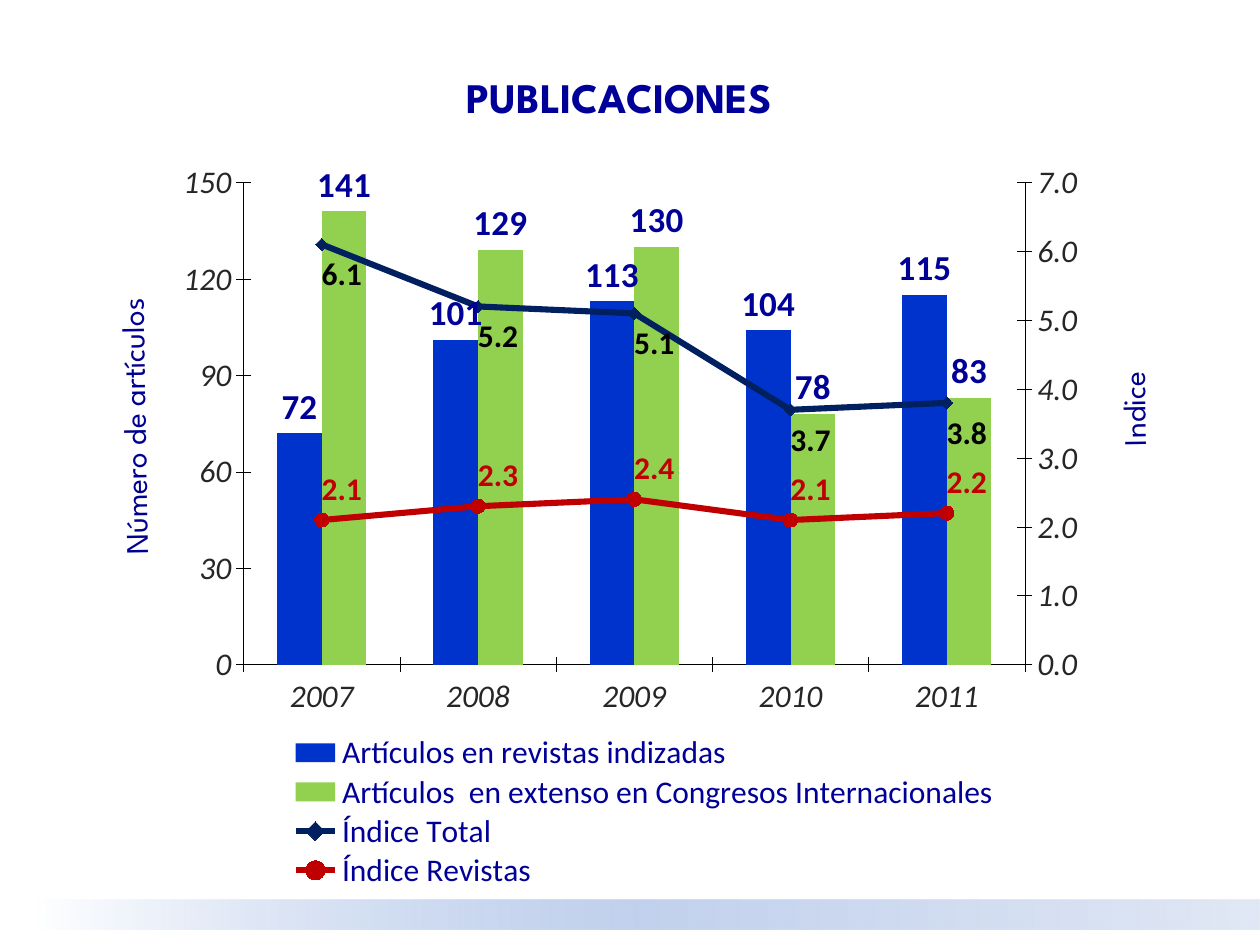
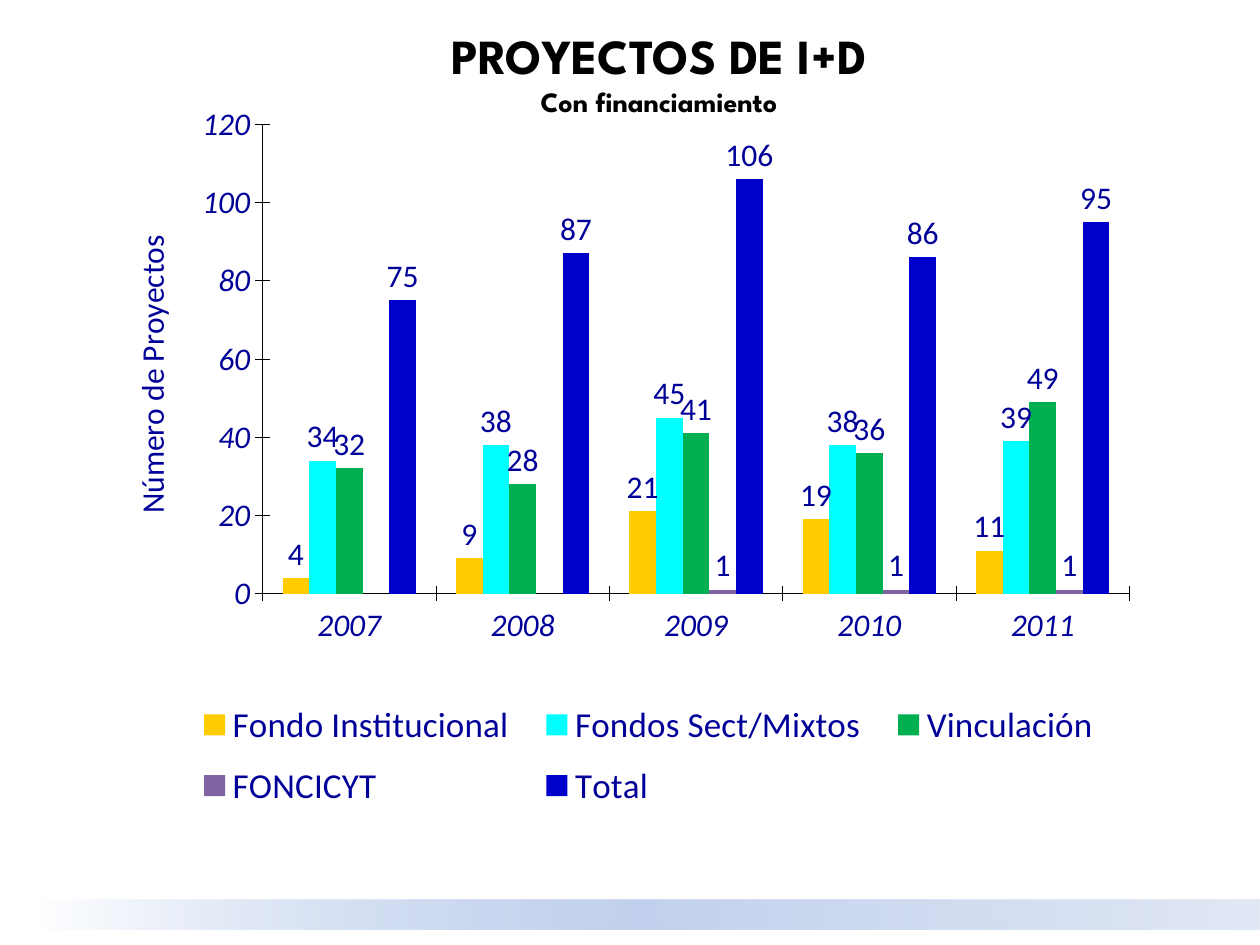
from copy import deepcopy
from dataclasses import dataclass

from pptx import Presentation
from pptx.chart.axis import ValueAxis
from pptx.chart.data import CategoryChartData
from pptx.dml.color import RGBColor
from pptx.enum.chart import (XL_CHART_TYPE, XL_LABEL_POSITION, XL_LEGEND_POSITION,
                             XL_MARKER_STYLE, XL_TICK_MARK)
from pptx.enum.shapes import MSO_SHAPE
from pptx.enum.text import MSO_ANCHOR, MSO_AUTO_SIZE, PP_ALIGN
from pptx.oxml import parse_xml
from pptx.oxml.ns import nsdecls, qn
from pptx.util import Inches, Pt

COLUMNS = XL_CHART_TYPE.COLUMN_CLUSTERED
ABOVE, BELOW, OUTSIDE = (XL_LABEL_POSITION.ABOVE, XL_LABEL_POSITION.BELOW,
                         XL_LABEL_POSITION.OUTSIDE_END)
DIAMOND, CIRCLE = XL_MARKER_STYLE.DIAMOND, XL_MARKER_STYLE.CIRCLE
CROSS = XL_TICK_MARK.CROSS
LEGEND_RIGHT = XL_LEGEND_POSITION.RIGHT
RECTANGLE = MSO_SHAPE.RECTANGLE
CENTER = PP_ALIGN.CENTER
MIDDLE = MSO_ANCHOR.MIDDLE
NO_FIT = MSO_AUTO_SIZE.NONE
TITLE_ONLY = 5
GRID_COLS, GRID_ROWS = 100, 75
SLIDE_W, SLIDE_H = Inches(10), Inches(7.5)
YEARS = ["2007", "2008", "2009", "2010", "2011"]


@dataclass(frozen=True)
class Theme:
    """Colours, fonts and type sizes shared by the slides."""
    heading: str = "League Spartan"
    body: str = "Calibri"
    navy: str = "000099"
    side: str = "000090"
    black: str = "000000"
    grey: str = "262626"
    band: tuple = ((0, "9AB5E4", 0), (50, "C2D1ED", 100), (100, "E1E8F5", 100))
    text: int = 18
    large: int = 20
    subtitle: int = 16


T = Theme()

ARTICLES = [("Artículos en revistas indizadas", "0033CC", (72, 101, 113, 104, 115)),
            ("Artículos  en extenso en Congresos Internacionales", "92D050",
             (141, 129, 130, 78, 83))]
INDEXES = [("Índice Total", "002060", (6.1, 5.2, 5.1, 3.7, 3.8)),
           ("Índice Revistas", "C00000", (2.1, 2.3, 2.4, 2.1, 2.2))]
INDEX_STYLES = [(DIAMOND, 7, BELOW, T.black), (CIRCLE, 8, ABOVE, "C00000")]
PROJECTS = [("Fondo Institucional", "FFCC00", (4, 9, 21, 19, 11)),
            ("Fondos Sect/Mixtos", "00FFFF", (34, 38, 45, 38, 39)),
            ("Vinculación", "00B050", (32, 28, 41, 36, 49)),
            ("FONCICYT", "8064A2", (None, None, 1, 1, 1)),
            ("Total", "0000CC", (75, 87, 106, 86, 95))]


def place(box):
    """Turn a box in grid columns and rows into slide lengths."""
    x, y, w, h = box
    return (int(SLIDE_W * x / GRID_COLS), int(SLIDE_H * y / GRID_ROWS),
            int(SLIDE_W * w / GRID_COLS), int(SLIDE_H * h / GRID_ROWS))


def style_font(font, size, color, name=T.body, bold=False, italic=False):
    """Format a run or chart font."""
    font.name, font.size, font.bold, font.italic = name, Pt(size), bold, italic
    font.color.rgb = RGBColor.from_string(color)


def paint(fill, color):
    """Give a fill one solid colour."""
    fill.solid()
    fill.fore_color.rgb = RGBColor.from_string(color)


def add_master_band(prs, s, box):
    """Place the fading band on the master, behind every slide."""
    band = s.shapes.add_shape(RECTANGLE, *place(box))
    band.shadow.inherit = False
    band.line.fill.background()
    band.fill.gradient()
    stops = "".join(
        f'<a:gs pos="{pos * 1000}"><a:srgbClr val="{color}">'
        f'<a:alpha val="{alpha * 1000}"/></a:srgbClr></a:gs>' for pos, color, alpha in T.band)
    grad = parse_xml(f'<a:gradFill {nsdecls("a")} rotWithShape="1"><a:gsLst>{stops}</a:gsLst>'
                     '<a:lin ang="0" scaled="0"/></a:gradFill>')
    old = band.element.spPr.find(qn("a:gradFill"))
    old.getparent().replace(old, grad)
    prs.slide_master.shapes.element.insert(2, band.element)


def add_title(s, box, lines, color):
    """Move the title placeholder and write its lines as (text, size)."""
    title = s.shapes.title
    title.left, title.top, title.width, title.height = place(box)
    tf = title.text_frame
    tf.text = "\n".join(text for text, _ in lines)
    tf.auto_size, tf.vertical_anchor, tf.word_wrap = NO_FIT, MIDDLE, True
    for p, (_, size) in zip(tf.paragraphs, lines):
        p.alignment = CENTER
        style_font(p.runs[0].font, size, color, T.heading, bold=True)


def add_side_label(s, box, text):
    """Write an axis caption that reads upwards."""
    label = s.shapes.add_textbox(*place(box))
    label.rotation = 269
    tf = label.text_frame
    tf.text = text
    tf.word_wrap, tf.auto_size = True, NO_FIT
    style_font(tf.paragraphs[0].runs[0].font, T.text, T.side, T.heading)


def set_layout(parent, index, box, target=""):
    """Fix the place of a chart part as shares of the chart."""
    for old in parent.findall(qn("c:layout")):
        parent.remove(old)
    sizes = "".join(f'<c:{k} val="{v}"/>' for k, v in zip("xywh", box))
    parent.insert(index, parse_xml(
        f'<c:layout {nsdecls("c")}><c:manualLayout>{target}<c:xMode val="edge"/>'
        f'<c:yMode val="edge"/>{sizes}</c:manualLayout></c:layout>'))


def style_axis(axis, color):
    """Give an axis a hairline, crossing ticks and italic labels."""
    axis.has_major_gridlines = False
    axis.major_tick_mark = CROSS
    axis.format.line.width = Pt(0.25)
    axis.format.line.color.rgb = RGBColor.from_string(T.black)
    style_font(axis.tick_labels.font, T.text, color, italic=True)


def label_series(series, size, color, position, bold=False, fmt="0"):
    """Show the values of a series."""
    labels = series.data_labels
    labels.show_value, labels.position = True, position
    labels.number_format, labels.number_format_is_linked = fmt, False
    style_font(labels.font, size, color, bold=bold)


def add_column_chart(s, box, rows, scale, axis_color, plot_box, legend_box, legend_size):
    """Add a clustered column chart with its axes, plot area and legend."""
    data = CategoryChartData()
    data.categories = YEARS
    for name, _, values in rows:
        data.add_series(name, values)
    chart = s.shapes.add_chart(COLUMNS, *place(box), data).chart
    chart.has_title = False
    style_font(chart.font, T.text, T.black)
    plot = chart.plots[0]
    plot.vary_by_categories, plot.gap_width, plot.overlap = False, 150, 0
    for series, (_, color, _) in zip(plot.series, rows):
        paint(series.format.fill, color)
    for axis in (chart.category_axis, chart.value_axis):
        style_axis(axis, axis_color)
    axis = chart.value_axis
    axis.minimum_scale, axis.maximum_scale, axis.major_unit = 0, *scale
    axis.tick_labels.number_format = "#,##0"
    axis.tick_labels.number_format_is_linked = False
    chart.has_legend = True
    chart.legend.position, chart.legend.include_in_layout = LEGEND_RIGHT, False
    style_font(chart.legend.font, legend_size, T.navy)
    set_layout(chart.element.xpath(".//c:plotArea")[0], 0, plot_box,
               '<c:layoutTarget val="inner"/>')
    set_layout(chart.element.xpath(".//c:legend")[0], 1, legend_box)
    return chart


def move_to_right_axis(chart, first, top, step):
    """Turn the series from the given one on into lines on a right-hand axis."""
    area = chart.element.xpath(".//c:plotArea")[0]
    bars = area.find(qn("c:barChart"))
    lines = parse_xml(
        f'<c:lineChart {nsdecls("c")}><c:grouping val="standard"/><c:varyColors val="0"/>'
        '<c:marker val="1"/><c:axId val="101"/><c:axId val="102"/></c:lineChart>')
    for i, ser in enumerate(bars.findall(qn("c:ser"))[first:]):
        for tag in ("c:invertIfNegative", "c:spPr"):
            for child in ser.findall(qn(tag)):
                ser.remove(child)
        lines.insert(2 + i, ser)
    bars.addnext(lines)
    cat, val = (deepcopy(area.find(qn(tag))) for tag in ("c:catAx", "c:valAx"))
    for axis, own, other in ((cat, "101", "102"), (val, "102", "101")):
        axis.find(qn("c:axId")).set("val", own)
        axis.find(qn("c:crossAx")).set("val", other)
    area.findall(qn("c:valAx"))[-1].addnext(val)
    val.addnext(cat)
    cat.find(qn("c:delete")).set("val", "1")
    val.find(qn("c:axPos")).set("val", "r")
    val.find(qn("c:crosses")).set("val", "max")
    right = ValueAxis(val)
    right.maximum_scale, right.major_unit = top, step
    right.tick_labels.number_format = "0.0"


def style_line(series, color, marker, size):
    """Draw a thick straight line with markers of its colour."""
    series.smooth = False
    series.format.line.width = Pt(3.5)
    series.format.line.color.rgb = RGBColor.from_string(color)
    series.marker.style, series.marker.size = marker, size
    paint(series.marker.format.fill, color)
    series.marker.format.line.color.rgb = RGBColor.from_string(color)


def nudge_line_labels(chart, shift):
    """Shift each line label to the right by a share of the chart's width."""
    for labels in chart.element.xpath(".//c:lineChart/c:ser/c:dLbls"):
        for leader in labels.findall(qn("c:showLeaderLines")):
            labels.remove(leader)
        shared = list(labels)
        for i in range(len(YEARS)):
            label = parse_xml(
                f'<c:dLbl {nsdecls("c")}><c:idx val="{i}"/><c:layout><c:manualLayout>'
                f'<c:x val="{shift}"/><c:y val="0"/></c:manualLayout></c:layout></c:dLbl>')
            label.extend(deepcopy(child) for child in shared)
            labels.insert(i, label)


def build_publications(s):
    """Fill the slide on publications: columns for articles, lines for indexes."""
    add_title(s, (29.5, 5.2, 39.3, 5), [("PUBLICACIONES", 24)], T.navy)
    chart = add_column_chart(s, (10.6, 11.5, 79.5, 59.8), ARTICLES + INDEXES, (150, 30), T.grey,
                             (0.11, 0.05, 0.78, 0.64), (0.15, 0.78, 0.72, 0.21), T.text)
    move_to_right_axis(chart, len(ARTICLES), 7, 1)
    columns, lines = chart.plots
    for series in columns.series:
        label_series(series, T.large, T.navy, OUTSIDE, bold=True)
    for series, (_, color, _), style in zip(lines.series, INDEXES, INDEX_STYLES):
        marker, size, position, label_color = style
        style_line(series, color, marker, size)
        label_series(series, T.text, label_color, position, bold=True, fmt="0.0")
    nudge_line_labels(chart, 0.02)
    add_side_label(s, (-2.9, 29.6, 26.9, 4), "Número de artículos")
    add_side_label(s, (85.1, 29.6, 9.6, 4), "Indice")


def build_projects(s):
    """Fill the slide on funded research projects."""
    add_title(s, (28.7, 1.5, 47.2, 8.4),
              [("PROYECTOS DE I+D", 28), ("Con financiamiento", T.subtitle)], T.black)
    chart = add_column_chart(s, (9.1, 6.8, 83.9, 61.1), PROJECTS, (120, 20), T.navy,
                             (0.14, 0.05, 0.82, 0.61), (0.06, 0.78, 0.89, 0.18), T.large)
    for series in chart.plots[0].series:
        label_series(series, T.text, T.navy, OUTSIDE)
    tf = chart.value_axis.axis_title.text_frame
    tf.text = "Número de Proyectos"
    style_font(tf.paragraphs[0].runs[0].font, T.text, T.navy)
    chart.element.xpath(".//c:valAx/c:title//a:bodyPr")[0].set("rot", "-5400000")


def main():
    """Build and save the deck."""
    prs = Presentation()
    prs.slide_width, prs.slide_height = SLIDE_W, SLIDE_H
    layout = prs.slide_layouts[TITLE_ONLY]
    slides = [prs.slides.add_slide(layout) for _ in range(2)]
    add_master_band(prs, slides[0], (2.8, 71.4, 97.2, 2.4))
    for build, s in zip((build_publications, build_projects), slides):
        build(s)
    prs.save("out.pptx")


if __name__ == "__main__":
    main()
